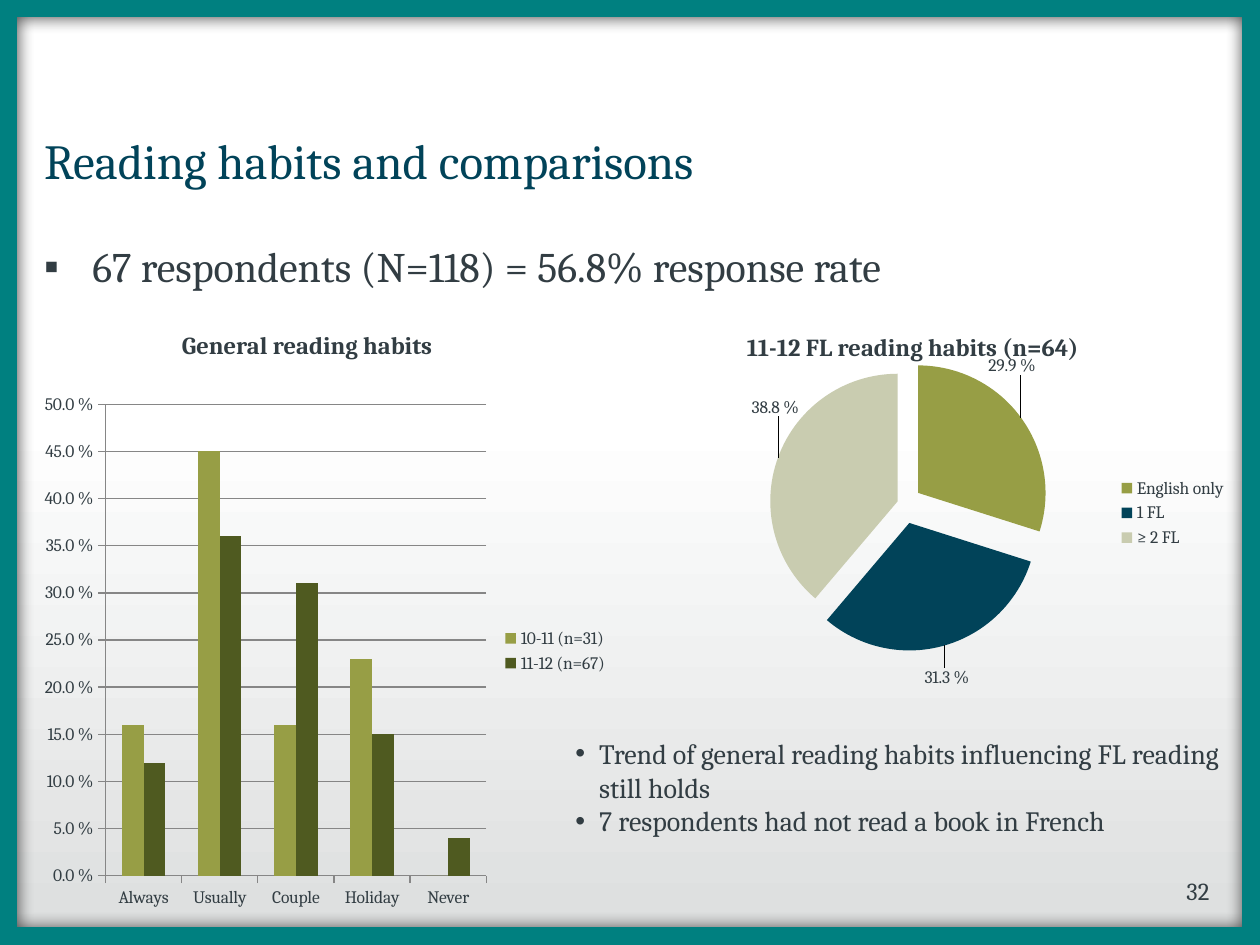
from dataclasses import dataclass

from lxml.etree import SubElement
from pptx import Presentation
from pptx.chart.data import CategoryChartData
from pptx.dml.color import RGBColor
from pptx.enum.chart import XL_CHART_TYPE, XL_LABEL_POSITION, XL_LEGEND_POSITION, XL_TICK_MARK
from pptx.enum.shapes import MSO_SHAPE
from pptx.enum.text import MSO_ANCHOR, PP_ALIGN
from pptx.oxml import parse_xml
from pptx.oxml.ns import nsdecls, qn
from pptx.util import Cm, Pt

FONT = "Cambria"
INK, NAVY, OLIVE, MOSS = "323D43", "014359", "979E45", "4F5A20"
SAND, TEAL, GRID = "C9CCB0", "008080", "868686"
PERCENT = "0.0\\ %"


@dataclass
class Box:
    """Position and size in centimetres."""
    left: float
    top: float
    width: float
    height: float

    def lengths(self):
        return Cm(self.left), Cm(self.top), Cm(self.width), Cm(self.height)


@dataclass
class ChartSpec:
    kind: XL_CHART_TYPE
    box: Box
    plot: tuple  # x, y, width, height as fractions of the chart
    categories: list
    series: dict


@dataclass
class Wedge:
    color: str
    explosion: int
    label_shift: tuple


COLUMNS = ChartSpec(
    XL_CHART_TYPE.COLUMN_CLUSTERED, Box(0.71, 7.72, 11.81, 10.8), (0.12, 0.04, 0.65, 0.88),
    ["Always", "Usually", "Couple", "Holiday", "Never"],
    {"10-11 (n=31)": (0.16, 0.45, 0.16, 0.23, 0),
     "11-12 (n=67)": (0.12, 0.36, 0.31, 0.15, 0.04)})
PIE = ChartSpec(
    XL_CHART_TYPE.PIE, Box(13.89, 6.53, 11.1, 7.62), (0.09, 0.04, 0.6, 0.87),
    ["English only", "1 FL", "≥ 2 FL"], {"Series 1": (0.299, 0.313, 0.388)})
WEDGES = (Wedge(OLIVE, 14, (-0.07, -0.1)),
          Wedge(NAVY, 16, (-0.04, 0.04)),
          Wedge(SAND, 5, (0.05, -0.1)))


def rgb(color: str) -> RGBColor:
    return RGBColor.from_string(color)


def paint(part, color: str) -> None:
    part.fill.solid()
    part.fill.fore_color.rgb = rgb(color)


def write(shape, *lines: str, size=14, color=INK, bold=False, align=PP_ALIGN.LEFT,
          bullet="", indent=0.0, left=0.25, right=0.25) -> None:
    frame = shape.text_frame
    frame.word_wrap = True
    frame.vertical_anchor = MSO_ANCHOR.TOP
    frame.margin_left, frame.margin_right = Cm(left), Cm(right)
    frame.margin_top = frame.margin_bottom = Cm(0.13)
    for number, line in enumerate(lines):
        paragraph = frame.add_paragraph() if number else frame.paragraphs[0]
        paragraph.alignment = align
        paragraph.space_before = Pt(0)
        if bullet:
            properties = paragraph._p.get_or_add_pPr()
            properties.set("marL", str(Cm(indent)))
            properties.set("indent", str(-Cm(indent)))
            SubElement(properties, qn("a:buFont")).set("typeface", "Arial")
            SubElement(properties, qn("a:buChar")).set("char", bullet)
        run = paragraph.add_run()
        run.text = line
        run.font.name, run.font.size, run.font.bold = FONT, Pt(size), bold
        run.font.color.rgb = rgb(color)


def place(shape, box: Box):
    shape.left, shape.top, shape.width, shape.height = box.lengths()
    return shape


def add_text(slide, box: Box, *lines: str, **style) -> None:
    write(slide.shapes.add_textbox(*box.lengths()), *lines, **style)


def layout_xml(values: tuple, inner: bool = False):
    """Manual layout: a plot area with x, y, w, h or a label shift with x, y."""
    modes = '<c:layoutTarget val="inner"/><c:xMode val="edge"/><c:yMode val="edge"/>' if inner else ""
    sizes = "".join(f'<c:{name} val="{value}"/>' for name, value in zip("xywh", values))
    return parse_xml(f'<c:layout {nsdecls("c")}><c:manualLayout>{modes}{sizes}'
                     '</c:manualLayout></c:layout>')


def explosion_xml(percent: int):
    return parse_xml(f'<c:explosion {nsdecls("c")} val="{percent}"/>')


def add_chart(slide, spec: ChartSpec):
    data = CategoryChartData(number_format=PERCENT)
    data.categories = spec.categories
    for name, values in spec.series.items():
        data.add_series(name, values)
    chart = slide.shapes.add_chart(spec.kind, *spec.box.lengths(), data).chart
    chart.has_title = False
    chart.font.name, chart.font.size = FONT, Pt(10)
    chart.font.color.rgb = rgb(INK)
    chart.has_legend = True
    chart.legend.position = XL_LEGEND_POSITION.RIGHT
    chart.legend.include_in_layout = False
    chart.plots[0].vary_by_categories = spec.kind == XL_CHART_TYPE.PIE
    plot_area = chart._chartSpace.chart.plotArea
    for old in plot_area.findall(qn("c:layout")):
        plot_area.remove(old)
    plot_area.insert(0, layout_xml(spec.plot, inner=True))
    return chart


def add_column_chart(slide) -> None:
    chart = add_chart(slide, COLUMNS)
    chart.plots[0].gap_width = 150
    chart.plots[0].overlap = 0
    for series, color in zip(chart.plots[0].series, (OLIVE, MOSS)):
        paint(series.format, color)
    values = chart.value_axis
    values.minimum_scale, values.maximum_scale, values.major_unit = 0, 0.5, 0.05
    values.tick_labels.number_format = PERCENT
    values.tick_labels.number_format_is_linked = False
    for axis in (values, chart.category_axis):
        axis.major_tick_mark = XL_TICK_MARK.OUTSIDE
        axis.format.line.color.rgb = rgb(GRID)
    values.major_gridlines.format.line.color.rgb = rgb(GRID)


def add_pie_chart(slide) -> None:
    series = add_chart(slide, PIE).plots[0].series[0]
    labels = series.data_labels
    labels.show_value = True
    labels.number_format, labels.number_format_is_linked = PERCENT, False
    labels.position = XL_LABEL_POSITION.OUTSIDE_END
    for index, wedge in enumerate(WEDGES):
        point = series.points[index]
        paint(point.format, wedge.color)
        point_element = series._element.findall(qn("c:dPt"))[index]
        point_element.find(qn("c:spPr")).addprevious(explosion_xml(wedge.explosion))
        point.data_label.position = XL_LABEL_POSITION.OUTSIDE_END
        label = labels._element.findall(qn("c:dLbl"))[index]
        label.find(qn("c:idx")).addnext(layout_xml(wedge.label_shift))
    series._element.find(qn("c:dPt")).addprevious(explosion_xml(29))
    leader = labels._element.find(qn("c:showLeaderLines"))
    if leader is None:
        leader = SubElement(labels._element, qn("c:showLeaderLines"))
    leader.set("val", "1")


def add_backdrop(slide) -> None:
    shape = slide.shapes.add_shape(MSO_SHAPE.RECTANGLE, *Box(-0.23, 8.46, 25.63, 10.59).lengths())
    shape.shadow.inherit = False
    shape.line.fill.background()
    shape.fill.gradient()
    shape.fill.gradient_angle = 270
    for stop, position, color in zip(shape.fill.gradient_stops, (0, 1), ("FFFFFF", "DCDEDE")):
        stop.position = position
        stop.color.rgb = rgb(color)
    slide.shapes._spTree.insert(2, shape._element)


def add_frame(slide) -> None:
    shape = slide.shapes.add_shape(MSO_SHAPE.RECTANGLE, *Box(0, 0, 25.4, 19.05).lengths())
    shape.fill.background()
    shape.line.color.rgb = rgb(TEAL)
    shape.line.width = Pt(20)
    shape.shadow.inherit = False
    shape._element.spPr.find(qn("a:effectLst")).append(parse_xml(
        f'<a:outerShdw {nsdecls("a")} blurRad="127000" dist="0" rotWithShape="0">'
        '<a:srgbClr val="404040"/></a:outerShdw>'))


def main() -> None:
    presentation = Presentation()
    presentation.slide_width, presentation.slide_height = Cm(25.4), Cm(19.05)
    slide = presentation.slides.add_slide(presentation.slide_layouts[1])
    add_backdrop(slide)
    write(place(slide.shapes.title, Box(0.89, 2.51, 23.6, 1.8)), "Reading habits and comparisons",
          size=28, color=NAVY, left=0)
    write(place(slide.placeholders[1], Box(0.89, 4.72, 23.6, 11.43)),
          "67 respondents (N=118) = 56.8% response rate", size=24, bullet="▪", indent=0.97, left=0)
    add_text(slide, Box(19.1, 17.53, 5.28, 1.27), "32", align=PP_ALIGN.RIGHT, right=0)
    add_column_chart(slide)
    add_text(slide, Box(1.09, 6.53, 10.21, 0.84), "General reading habits",
             bold=True, align=PP_ALIGN.CENTER)
    add_pie_chart(slide)
    add_text(slide, Box(13.3, 6.56, 10.21, 0.84), "11-12 FL reading habits (n=64)",
             bold=True, align=PP_ALIGN.CENTER)
    add_text(slide, Box(11.35, 14.72, 13.61, 2.29),
             "Trend of general reading habits influencing FL reading still holds",
             "7 respondents had not read a book in French", size=16, bullet="•", indent=0.48)
    add_frame(slide)
    presentation.save("out.pptx")


if __name__ == "__main__":
    main()
